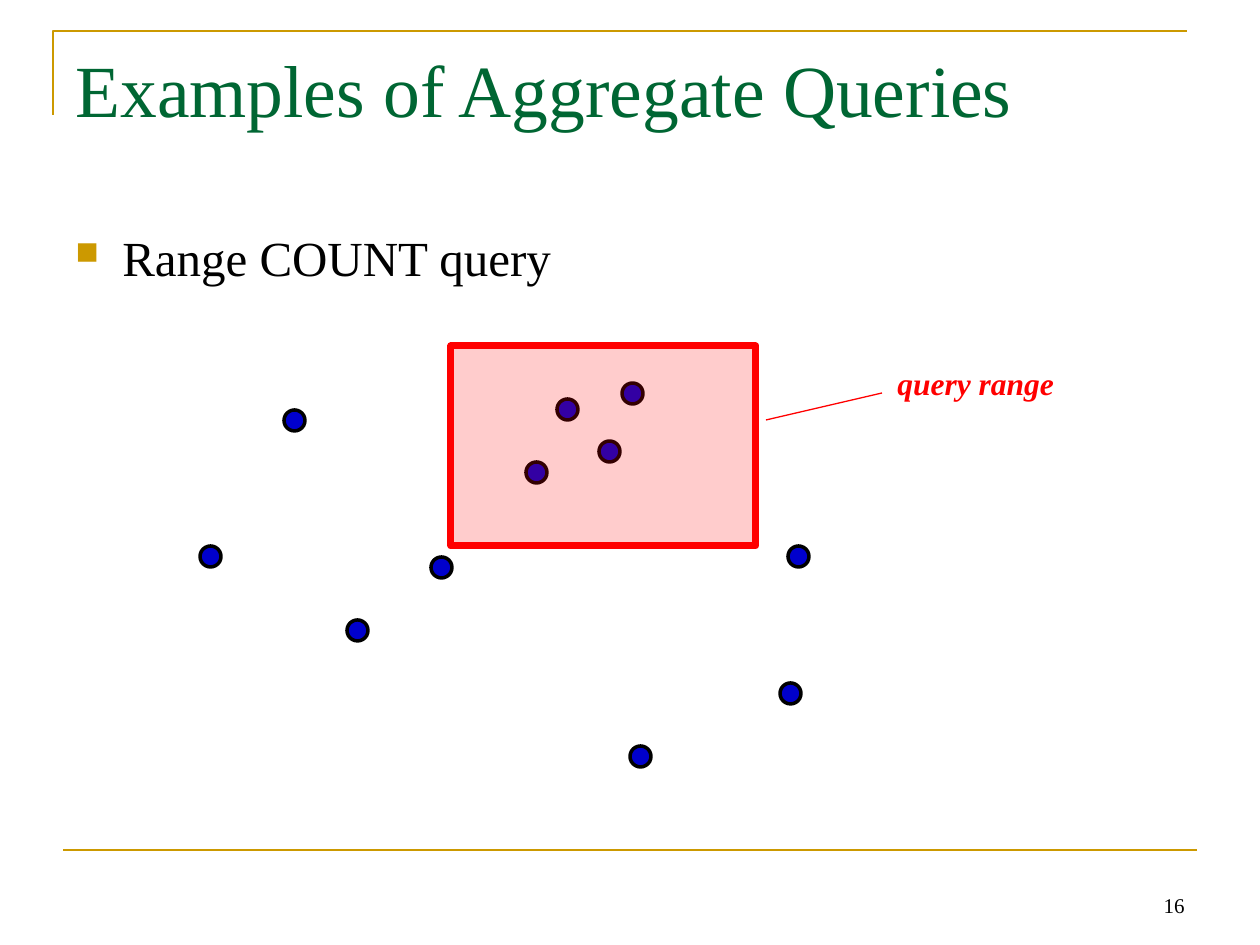
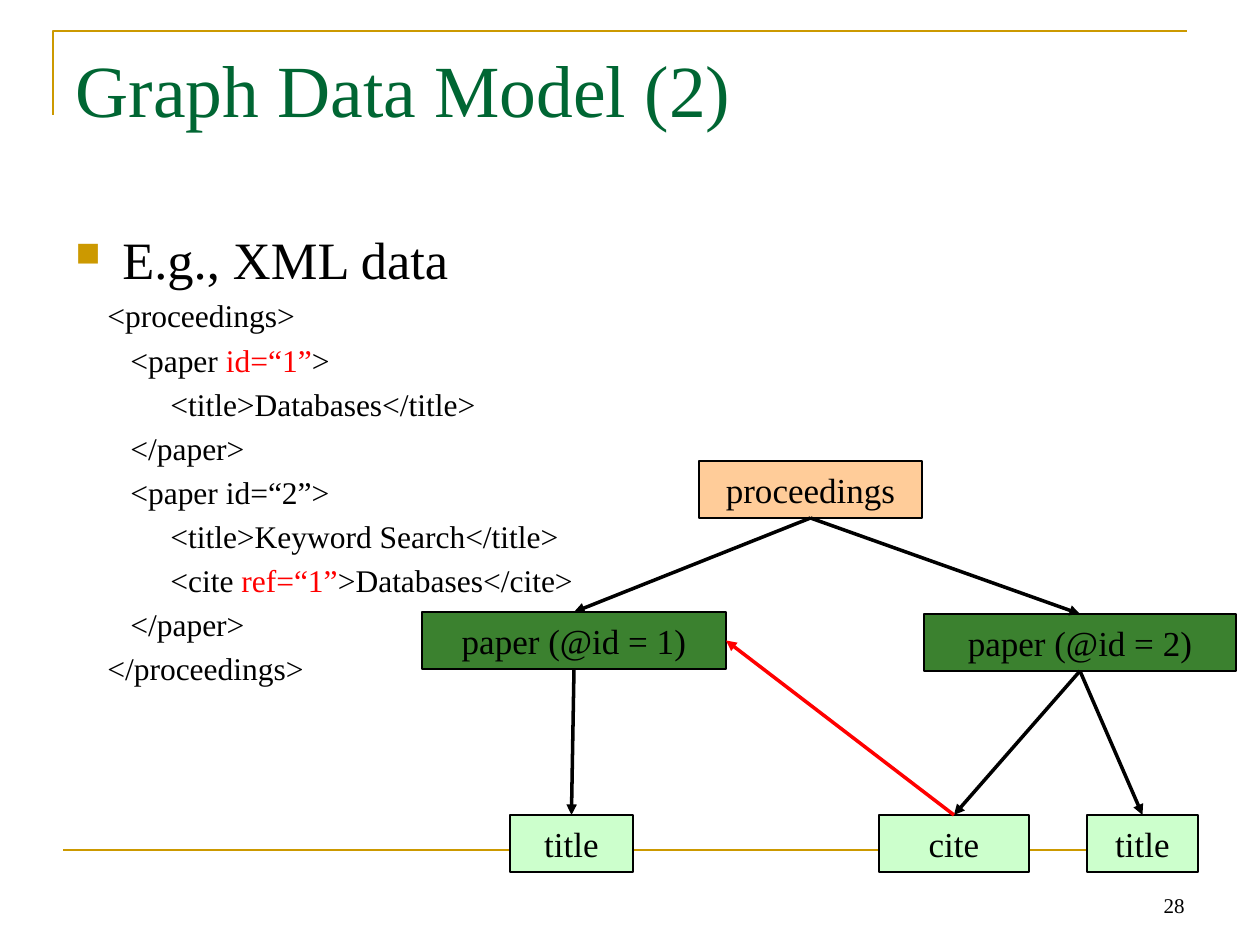
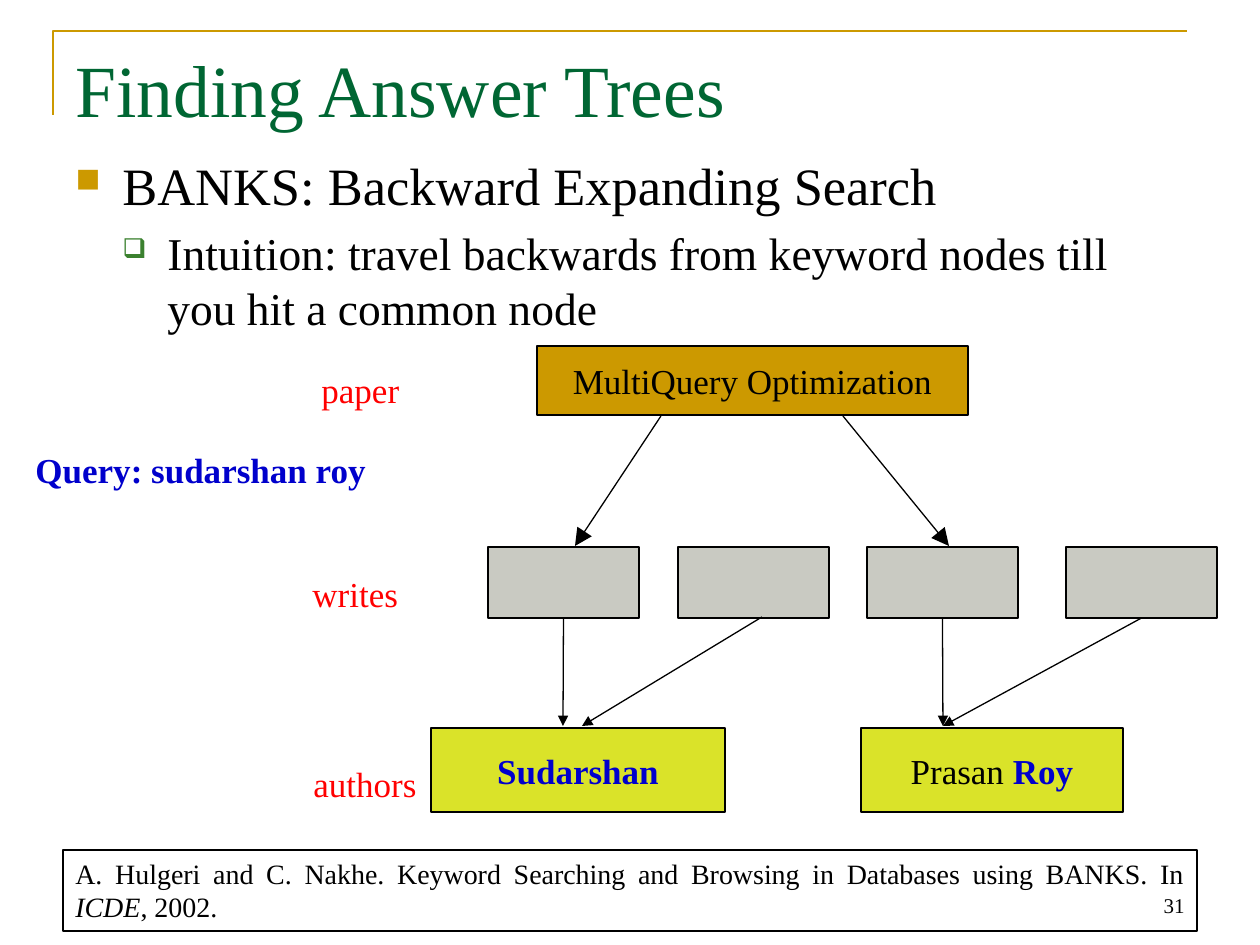
"""Build three database lecture slides: aggregate queries, graph data and answer trees."""

import dataclasses

import lxml.etree
import pptx
import pptx.dml.color
import pptx.enum.shapes
import pptx.enum.text
import pptx.oxml.ns
import pptx.util

ALIGN = pptx.enum.text.PP_ALIGN
ANCHOR = pptx.enum.text.MSO_ANCHOR
SHAPE = pptx.enum.shapes.MSO_SHAPE
TOP, LEFT, BOTTOM, RIGHT = range(4)
EMU_PER_PX = 914400 / 126
TITLE_ONLY = 5


@dataclasses.dataclass(frozen=True)
class Theme:
    """Colours, font and type sizes of the deck."""

    font: str = "Times New Roman"
    gold: str = "CC9900"
    title: str = "006633"
    green: str = "3B812F"
    black: str = "000000"
    red: str = "FF0000"
    blue: str = "0000CC"
    mint: str = "CCFFCC"
    peach: str = "FFCC99"
    lime: str = "DAE329"
    grey: str = "C9CAC2"
    title_size: int = 42
    head_size: int = 30
    count_size: int = 28
    sub_size: int = 26
    node_size: int = 20
    code_size: int = 18
    cite_size: int = 16
    number_size: int = 12


THEME = Theme()


def px(length):
    """Turn pixels into EMU."""
    return pptx.util.Emu(round(length * EMU_PER_PX))


def rgb(value):
    """Turn a hex string into a colour."""
    return pptx.dml.color.RGBColor.from_string(value)


def child(parent, tag, **attributes):
    """Append a drawing element to its parent."""
    return lxml.etree.SubElement(parent, pptx.oxml.ns.qn(tag), attributes)


def write(frame, text, *, size, color=THEME.black, bold=False, italic=False,
          align=ALIGN.LEFT, before=0, margin=0, hang=0, level=0, bullet=None):
    """Add one paragraph; text is a string or a list of (string, format changes)."""
    para = frame.paragraphs[0]
    if para.runs:
        para = frame.add_paragraph()
    para.alignment, para.level = align, level
    para.space_before = pptx.util.Pt(before)
    properties = para._p.get_or_add_pPr()
    properties.set("marL", str(px(margin)))
    properties.set("indent", str(px(-hang)))
    if bullet:
        mark, mark_color, percent = bullet
        child(child(properties, "a:buClr"), "a:srgbClr", val=mark_color)
        child(properties, "a:buSzPct", val=str(percent * 1000))
        child(properties, "a:buChar", char=mark)
    else:
        child(properties, "a:buNone")
    base = {"color": color, "bold": bold, "italic": italic}
    for words, changes in [(text, {})] if isinstance(text, str) else text:
        look = base | changes
        span = para.add_run()
        span.text = words
        span.font.name, span.font.size = THEME.font, pptx.util.Pt(size)
        span.font.bold, span.font.italic = look["bold"], look["italic"]
        span.font.color.rgb = rgb(look["color"])


class Deck:
    """Holds the theme, the presentation and the current page."""

    def __init__(self, theme):
        """Start an empty 10 by 7.5 inch deck."""
        self.theme = theme
        self.deck = pptx.Presentation()
        self.deck.slide_width, self.deck.slide_height = px(1260), px(945)
        self.page = None

    def add_page(self, title, number):
        """Start a page with its title, gold frame and number."""
        theme = self.theme
        layout = self.deck.slide_layouts[TITLE_ONLY]
        self.page = self.deck.slides.add_slide(layout)
        corner = self.page.shapes.build_freeform(53, 115, scale=EMU_PER_PX)
        corner.add_line_segments([(53, 31), (1187, 31)], close=False)
        self.paint(corner.convert_to_shape(), None, theme.gold, 1.5)
        self.line((63, 850), (1197, 850), color=theme.gold, width=1.5)
        heading = self.page.shapes.title
        heading.left, heading.top, heading.width, heading.height = map(px, (63, 38, 1134, 158))
        frame = heading.text_frame
        frame.auto_size = pptx.enum.text.MSO_AUTO_SIZE.NONE
        frame.vertical_anchor = ANCHOR.TOP
        write(frame, title, size=theme.title_size, color=theme.title)
        footer = self.text(903, 861, 294, 63, anchor=ANCHOR.BOTTOM)
        write(footer, number, size=theme.number_size, align=ALIGN.RIGHT)

    def paint(self, shape, fill, line, width, opacity=100):
        """Set the fill and outline of a shape and drop its shadow."""
        shape.shadow.inherit = False
        shape.line.color.rgb = rgb(line)
        shape.line.width = pptx.util.Pt(width)
        if fill is None:
            shape.fill.background()
            return
        shape.fill.solid()
        shape.fill.fore_color.rgb = rgb(fill)
        if opacity < 100:
            paint = shape.element.spPr.find(pptx.oxml.ns.qn("a:solidFill"))
            child(paint[0], "a:alpha", val=str(opacity * 1000))

    def shape(self, left, top, width, height, fill, *, kind=SHAPE.RECTANGLE,
              line=THEME.black, weight=0.75, opacity=100):
        """Draw a preset shape."""
        box = self.page.shapes.add_shape(kind, *map(px, (left, top, width, height)))
        self.paint(box, fill, line, weight, opacity)
        return box

    def node(self, left, top, width, height, text, fill, *, weight=0.75, **look):
        """Draw a rectangle with a centred label."""
        box = self.shape(left, top, width, height, fill, weight=weight)
        box.text_frame.word_wrap = False
        box.text_frame.vertical_anchor = ANCHOR.MIDDLE
        write(box.text_frame, text, size=self.theme.node_size, align=ALIGN.CENTER, **look)
        return box

    def text(self, left, top, width, height, *, wrap=True, anchor=ANCHOR.TOP):
        """Add a text box and return its frame."""
        box = self.page.shapes.add_textbox(*map(px, (left, top, width, height)))
        frame = box.text_frame
        frame.word_wrap, frame.vertical_anchor = wrap, anchor
        return frame

    def label(self, left, top, width, text, **look):
        """Add a one-line label."""
        write(self.text(left, top, width, 55, wrap=False), text, **look)

    def body(self, top):
        """Add the body text area."""
        return self.text(63, top, 1134, 624)

    def bullet(self, frame, text, size, **look):
        """Add a first-level bullet."""
        write(frame, text, size=size, before=size / 5, margin=47, hang=47,
              bullet=("■", self.theme.gold, 65), **look)

    def line(self, start, end, *, color=THEME.black, width=0.75, head=None):
        """Draw a line between points (x, y) or joints (box, side)."""
        joints = [not isinstance(place[0], int) for place in (start, end)]
        first, last = [(0, 0) if joint else place
                       for joint, place in zip(joints, (start, end))]
        link = self.page.shapes.add_connector(
            pptx.enum.shapes.MSO_CONNECTOR.STRAIGHT, *map(px, first + last))
        if joints[0]:
            link.begin_connect(*start)
        if joints[1]:
            link.end_connect(*end)
        link.line.color.rgb = rgb(color)
        link.line.width = pptx.util.Pt(width)
        properties = link.element.spPr
        if head:
            stroke = properties.find(pptx.oxml.ns.qn("a:ln"))
            child(stroke, "a:tailEnd", type="triangle", w=head, len=head)
        child(properties, "a:effectLst")


def aggregate_page(deck):
    """Show points and a query range."""
    theme = deck.theme
    deck.add_page("Examples of Aggregate Queries", "16")
    deck.bullet(deck.body(221), "Range COUNT query", theme.count_size, align=ALIGN.JUSTIFY)
    points = [(294, 420), (210, 556), (567, 409), (357, 630), (536, 472), (790, 693),
              (798, 556), (441, 567), (640, 756), (632, 393), (609, 451)]
    for x, y in points:
        deck.shape(x - 10, y - 10, 21, 21, theme.blue, kind=SHAPE.OVAL, weight=2)
    deck.shape(451, 346, 305, 200, theme.red, line=theme.red, weight=4, opacity=20)
    deck.line((766, 420), (882, 393), color=theme.red)
    deck.label(885, 358, 190, "query range", size=theme.code_size, color=theme.red,
               bold=True, italic=True)


def graph_page(deck):
    """Show XML data beside its graph."""
    theme = deck.theme
    red = {"color": theme.red}
    deck.add_page("Graph Data Model (2)", "28")
    frame = deck.body(221)
    deck.bullet(frame, "E.g., XML data", theme.head_size)
    root, paper, field = 32, 55, 95
    code = [
        (root, "<proceedings>"),
        (paper, [("<paper ", {}), ("id=“1”", red), (">", {})]),
        (field, "<title>Databases</title>"),
        (paper, "</paper>"),
        (paper, "<paper id=“2”>"),
        (field, "<title>Keyword Search</title>"),
        (field, [("<cite ", {}), ("ref=“1”", red), (">Databases</cite>", {})]),
        (paper, "</paper>"),
        (root, "</proceedings>"),
    ]
    for margin, text in code:
        write(frame, text, size=theme.code_size, before=theme.code_size / 5, margin=margin)

    proceedings, paper_1, paper_2, title_1, cite, title_2 = [
        deck.node(left, top, width, 57, text, fill, weight=1.5)
        for left, top, width, text, fill in [
            (699, 461, 223, "proceedings", theme.peach),
            (422, 612, 304, "paper (@id = 1)", theme.green),
            (924, 614, 312, "paper (@id = 2)", theme.green),
            (510, 815, 123, "title", theme.mint),
            (879, 815, 150, "cite", theme.mint),
            (1087, 815, 111, "title", theme.mint),
        ]]
    edges = [(proceedings, paper_1), (proceedings, paper_2), (paper_1, title_1),
             (paper_2, title_2), (paper_2, cite)]
    for parent, part in edges:
        deck.line((parent, BOTTOM), (part, TOP), width=2, head="med")
    deck.line((cite, TOP), (paper_1, RIGHT), color=theme.red, width=2, head="med")


def answer_page(deck):
    """Show the answer tree for a keyword query."""
    theme = deck.theme
    keyword = {"color": theme.blue, "bold": True}
    deck.add_page("Finding Answer Trees", "31")
    frame = deck.body(147)
    deck.bullet(frame, "BANKS: Backward Expanding Search", theme.head_size)
    write(frame, "Intuition: travel backwards from keyword nodes till you hit a common node",
          size=theme.sub_size, before=theme.sub_size / 5, margin=92, hang=45, level=1,
          bullet=("❑", theme.green, 60))

    deck.node(537, 346, 431, 69, "MultiQuery Optimization", theme.gold)
    writes = [deck.shape(left, 547, 151, 71, theme.grey) for left in (488, 678, 867, 1066)]
    deck.node(431, 728, 294, 84, "Sudarshan", theme.lime, **keyword)
    deck.node(861, 728, 262, 84, [("Prasan ", {}), ("Roy", keyword)], theme.lime)

    for left, top, width, text in [(309, 362, 120, "paper"), (300, 566, 123, "writes"),
                                   (301, 756, 130, "authors")]:
        deck.label(left, top, width, text, size=theme.node_size, color=theme.red)
    deck.label(23, 442, 358, "Query: sudarshan roy", size=theme.node_size, **keyword)

    for start, end, head in [
            ((661, 416), (575, 546), "lg"),
            ((843, 416), (949, 546), "lg"),
            ((writes[0], BOTTOM), (563, 726), "med"),
            ((762, 617), (582, 726), "med"),
            ((writes[2], BOTTOM), (943, 726), "med"),
            ((writes[3], BOTTOM), (943, 726), "med")]:
        deck.line(start, end, head=head)

    source = deck.shape(63, 850, 1134, 81, None).text_frame
    source.word_wrap, source.vertical_anchor = True, ANCHOR.TOP
    write(source, [("A. Hulgeri and C. Nakhe. Keyword Searching and Browsing in Databases "
                    "using BANKS. In ", {}), ("ICDE", {"italic": True}), (", 2002.", {})],
          size=theme.cite_size, align=ALIGN.JUSTIFY)


def main():
    """Build and save the deck."""
    deck = Deck(THEME)
    for build in (aggregate_page, graph_page, answer_page):
        build(deck)
    deck.deck.save("out.pptx")


if __name__ == "__main__":
    main()
